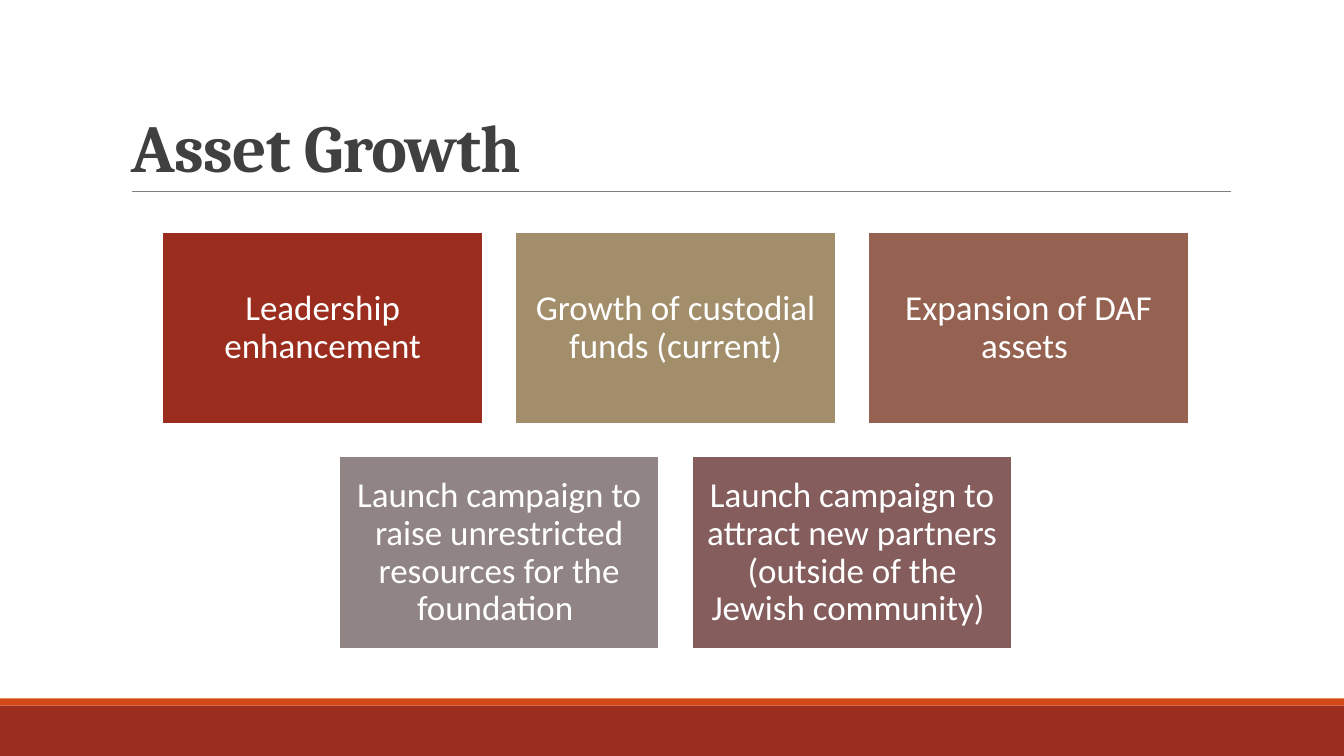
from pptx import Presentation
from pptx.dml.color import RGBColor
from pptx.enum.shapes import MSO_CONNECTOR, MSO_SHAPE
from pptx.enum.text import MSO_ANCHOR, PP_ALIGN
from pptx.oxml.ns import qn
from pptx.util import Inches, Pt
from lxml import etree

RECTANGLE = MSO_SHAPE.RECTANGLE
STRAIGHT = MSO_CONNECTOR.STRAIGHT
MIDDLE, BOTTOM = MSO_ANCHOR.MIDDLE, MSO_ANCHOR.BOTTOM
LEFT, CENTER = PP_ALIGN.LEFT, PP_ALIGN.CENTER

# Content: rows of (goal, fill); trailing spaces affect the centring
TITLE = "Asset Growth"
GOAL_ROWS = [
    [("Leadership enhancement", "9B2D1F"),
     ("Growth of custodial funds (current)", "A28E6A"),
     ("Expansion of DAF assets ", "956251")],
    [("Launch campaign to raise unrestricted resources for the foundation ", "918485"),
     ("Launch campaign to attract new partners (outside of the Jewish community) ", "855D5D")],
]
# Footer bands: (top, height, fill)
FOOTER_BANDS = [(7, 0.5, "9B2D1F"), (6.93, 0.07, "D34817")]

THEME = {
    "rule": "808080",
    "border": "FFFFFF",
    "title": {"name": "Cambria", "size": Pt(48), "bold": True, "color": "404040"},
    "goal": {"name": "Calibri", "size": Pt(25), "bold": False, "color": "FFFFFF"},
}
TITLE_FRAME = {"word_wrap": True, "vertical_anchor": BOTTOM}
GOAL_FRAME = {"word_wrap": True, "vertical_anchor": MIDDLE,
              "margin_left": Inches(0.1), "margin_right": Inches(0.1),
              "margin_top": Inches(0.1), "margin_bottom": Inches(0.1)}
TITLE_PARAGRAPH = {"alignment": LEFT, "line_spacing": 0.85}
GOAL_PARAGRAPH = {"alignment": CENTER, "line_spacing": 0.9}

# Layout in inches
SLIDE_W, SLIDE_H = 13.33, 7.5
CARD_W, CARD_H, GAP = 3.18, 1.91, 0.32
GRID_CENTER, GRID_TOP = 6.7, 2.3


def set_all(target, values):
    for attribute, value in values.items():
        setattr(target, attribute, value)


def add_block(slide, left, top, width, height, fill):
    block = slide.shapes.add_shape(
        RECTANGLE, Inches(left), Inches(top), Inches(width), Inches(height))
    block.shadow.inherit = False
    block.fill.solid()
    block.fill.fore_color.rgb = RGBColor.from_string(fill)
    block.line.fill.background()
    return block


def write(shape, text, style, frame_format, paragraph_format):
    set_all(shape.text_frame, frame_format)
    paragraph = shape.text_frame.paragraphs[0]
    set_all(paragraph, paragraph_format)
    run = paragraph.add_run()
    run.text = text
    set_all(run.font, {key: style[key] for key in ("name", "size", "bold")})
    run.font.color.rgb = RGBColor.from_string(style["color"])
    return run


def main():
    deck = Presentation()
    deck.slide_width, deck.slide_height = Inches(SLIDE_W), Inches(SLIDE_H)
    slide = deck.slides.add_slide(deck.slide_layouts[6])

    # Footer bands
    for top, height, fill in FOOTER_BANDS:
        add_block(slide, 0, top, SLIDE_W, height, fill)

    # Rule under the title
    rule = slide.shapes.add_connector(
        STRAIGHT, Inches(1.31), Inches(1.9), Inches(12.21), Inches(1.9))
    rule.line.color.rgb = RGBColor.from_string(THEME["rule"])
    rule.line.width = Pt(0.5)
    etree.SubElement(rule.element.spPr, qn("a:effectLst"))

    # Title, with slightly tightened letters
    title = slide.shapes.add_textbox(Inches(1.2), Inches(0.31), Inches(11), Inches(1.59))
    title_run = write(title, TITLE, THEME["title"], TITLE_FRAME, TITLE_PARAGRAPH)
    title_run.font.element.set("spc", "-50") if hasattr(title_run.font, "element") \
        else title_run._r.get_or_add_rPr().set("spc", "-50")

    # Goal cards, each row centred
    for row, goals in enumerate(GOAL_ROWS):
        row_width = len(goals) * (CARD_W + GAP) - GAP
        top = GRID_TOP + row * (CARD_H + GAP)
        for column, (goal, fill) in enumerate(goals):
            left = GRID_CENTER - row_width / 2 + column * (CARD_W + GAP)
            card = add_block(slide, left, top, CARD_W, CARD_H, fill)
            card.line.color.rgb = RGBColor.from_string(THEME["border"])
            card.line.width = Pt(1.25)
            write(card, goal, THEME["goal"], GOAL_FRAME, GOAL_PARAGRAPH)

    deck.save("out.pptx")


if __name__ == "__main__":
    main()
